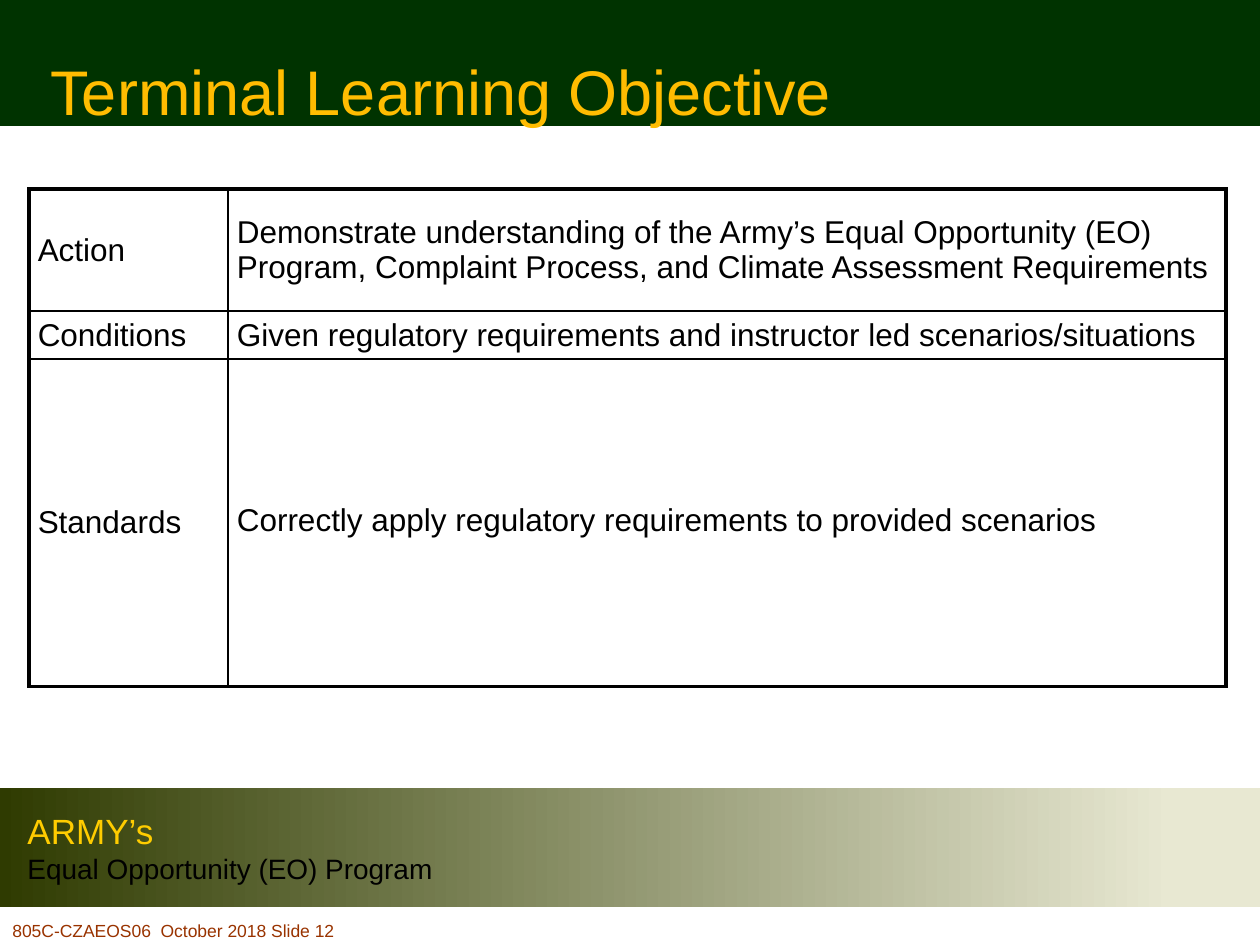
import dataclasses

import lxml.etree
import pptx
import pptx.dml.color
import pptx.enum.shapes
import pptx.enum.text
import pptx.oxml.ns
import pptx.util

SLIDE_W, SLIDE_H = 10, 7.5
FONT = "Arial"
BLACK, GOLD, GREEN = "000000", "FFBC01", "003300"
THICK, THIN = 2.25, 1
ALIGN = pptx.enum.text.PP_ALIGN
ANCHOR = pptx.enum.text.MSO_ANCHOR


@dataclasses.dataclass
class Box:
    """Left, top, width and height as shares of the slide."""
    left: float
    top: float
    width: float
    height: float

    def lengths(self) -> list:
        shares = ((self.left, SLIDE_W), (self.top, SLIDE_H),
                  (self.width, SLIDE_W), (self.height, SLIDE_H))
        return [pptx.util.Inches(share * size) for share, size in shares]


@dataclasses.dataclass
class ObjectiveRow:
    label: str
    statement: str
    height: float
    statement_top_inset: float = 0.04


def colour(code: str) -> pptx.dml.color.RGBColor:
    return pptx.dml.color.RGBColor.from_string(code)


def write(paragraph, text: str, *, size: float, ink: str = BLACK,
          align=ALIGN.LEFT, indent: float = 0) -> None:
    if indent:
        properties = paragraph._p.get_or_add_pPr()
        properties.set("marL", "0")
        properties.set("indent", str(pptx.util.Inches(indent)))
    paragraph.alignment = align
    run = paragraph.add_run()
    run.text = text
    run.font.name = FONT
    run.font.size = pptx.util.Pt(size)
    run.font.color.rgb = colour(ink)


def add_band(slide, box: Box):
    band = slide.shapes.add_shape(
        pptx.enum.shapes.MSO_SHAPE.RECTANGLE, *box.lengths())
    band.shadow.inherit = False
    band.line.fill.background()
    return band


def add_text(slide, box: Box, text: str, anchor=ANCHOR.TOP, **text_format) -> None:
    frame = slide.shapes.add_textbox(*box.lengths()).text_frame
    frame.word_wrap = True
    frame.vertical_anchor = anchor
    write(frame.paragraphs[0], text, **text_format)


def set_borders(cell, widths: dict[str, float]) -> None:
    properties = cell._tc.get_or_add_tcPr()
    for side, width in widths.items():
        line = lxml.etree.SubElement(
            properties, pptx.oxml.ns.qn(f"a:ln{side}"), w=str(pptx.util.Pt(width)))
        solid = lxml.etree.SubElement(line, pptx.oxml.ns.qn("a:solidFill"))
        lxml.etree.SubElement(solid, pptx.oxml.ns.qn("a:srgbClr"), val=BLACK)


def add_objectives(slide, box: Box, columns: list[float],
                   rows: list[ObjectiveRow]) -> None:
    table = slide.shapes.add_table(len(rows), len(columns), *box.lengths()).table
    table.first_row = table.horz_banding = False
    for column, width in zip(table.columns, columns):
        column.width = pptx.util.Inches(width)
    last_row, last_column = len(rows) - 1, len(columns) - 1
    for r, row in enumerate(rows):
        table.rows[r].height = pptx.util.Inches(row.height)
        insets = (0.04, row.statement_top_inset)
        for c, text in enumerate((row.label, row.statement)):
            cell = table.cell(r, c)
            cell.vertical_anchor = ANCHOR.MIDDLE
            cell.margin_left = cell.margin_right = pptx.util.Inches(0.07)
            cell.margin_top = pptx.util.Inches(insets[c])
            cell.margin_bottom = pptx.util.Inches(0.04)
            # Thick outside edges, thin inner rules
            set_borders(cell, {
                "L": THICK if c == 0 else THIN,
                "R": THICK if c == last_column else THIN,
                "T": THICK if r == 0 else THIN,
                "B": THICK if r == last_row else THIN,
            })
            cell.fill.background()
            write(cell.text_frame.paragraphs[0], text, size=18)


def main() -> None:
    deck = pptx.Presentation()
    deck.slide_width = pptx.util.Inches(SLIDE_W)
    deck.slide_height = pptx.util.Inches(SLIDE_H)
    slide = deck.slides.add_slide(deck.slide_layouts[6])

    # Header band
    header = add_band(slide, Box(0, 0, 1, 1 / SLIDE_H))
    header.fill.solid()
    header.fill.fore_color.rgb = colour(GREEN)

    # Programme band, fading to the right
    programme = add_band(slide, Box(0, 6.25 / SLIDE_H, 1, 0.95 / SLIDE_H))
    programme.fill.gradient()
    programme.fill.gradient_angle = 0
    fade = ((0, "2F3B01"), (0.93, "E8E8D2"))
    for stop, (position, shade) in zip(programme.fill.gradient_stops, fade):
        stop.position = position
        stop.color.rgb = colour(shade)
    frame = programme.text_frame
    frame.vertical_anchor = ANCHOR.MIDDLE
    write(frame.paragraphs[0], "ARMY’s", size=20, ink="FFCC00", indent=0.12)
    write(frame.add_paragraph(), "Equal Opportunity (EO) Program",
          size=16, indent=0.12)

    # Title and footer
    add_text(slide, Box(0, 0.19 / SLIDE_H, 0.7, 1.06 / SLIDE_H),
             "Terminal Learning Objective", anchor=ANCHOR.MIDDLE,
             size=36, ink=GOLD, align=ALIGN.CENTER)
    add_text(slide, Box(0, 7.25 / SLIDE_H, 0.39, 0.25 / SLIDE_H),
             "805C-CZAEOS06  October 2018 Slide 12", size=10, ink="993300")

    # Objective table
    objectives = [
        ObjectiveRow("Action", "Demonstrate understanding of the Army’s Equal "
                     "Opportunity (EO) Program, Complaint Process, and Climate "
                     "Assessment Requirements", 0.97),
        ObjectiveRow("Conditions", "Given regulatory requirements and instructor "
                     "led scenarios/situations", 0.35),
        ObjectiveRow("Standards", "Correctly apply regulatory requirements to "
                     "provided scenarios", 2.6, statement_top_inset=0),
    ]
    height = sum(row.height for row in objectives)
    add_objectives(slide, Box(0.023, 0.2, 0.95, height / SLIDE_H),
                   [1.58, 7.92], objectives)

    deck.save("out.pptx")


if __name__ == "__main__":
    main()
